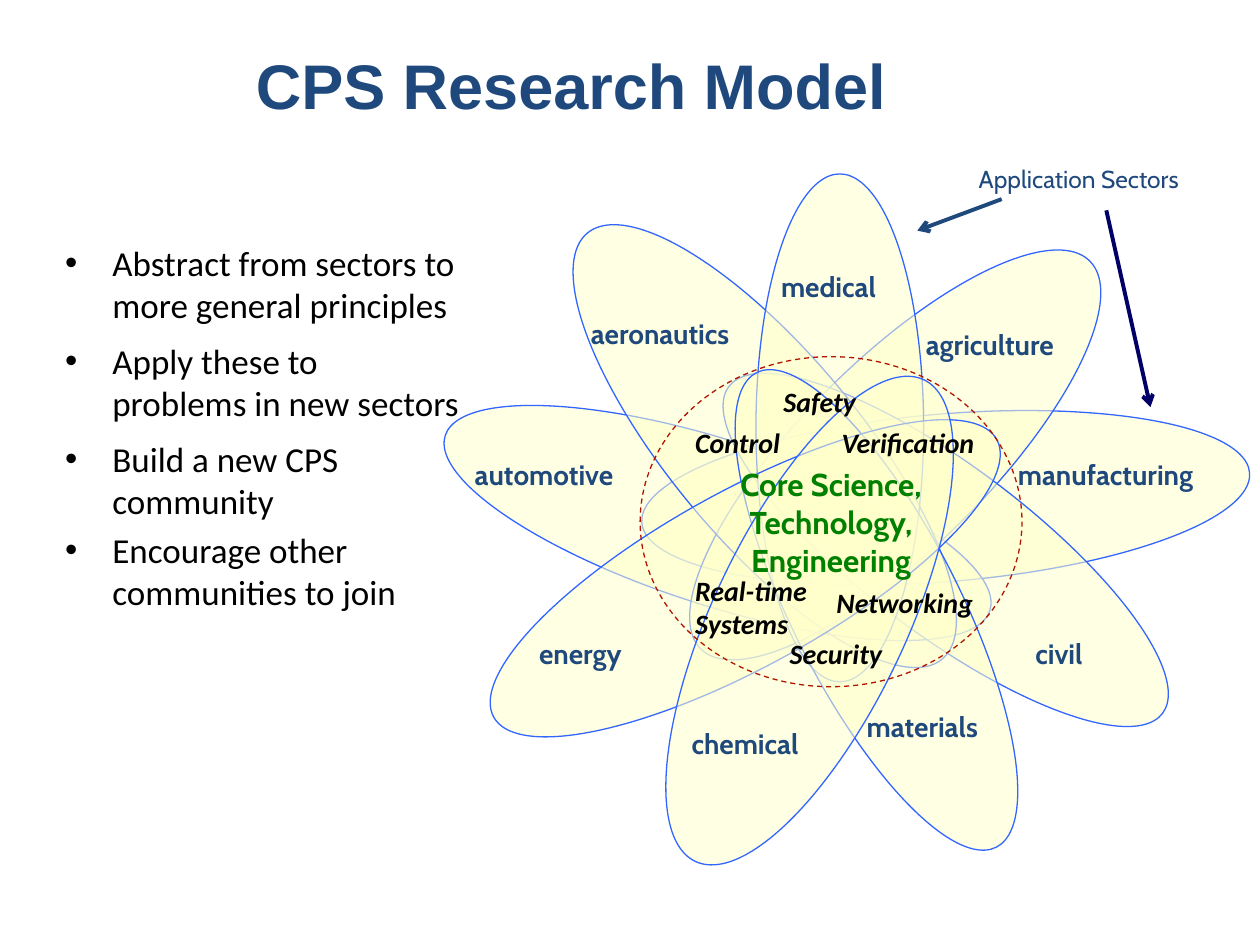
from dataclasses import dataclass

from lxml import etree
from pptx import Presentation, util as u
from pptx.dml.color import RGBColor
from pptx.enum import dml, shapes, text
from pptx.oxml.ns import qn

Pt = u.Pt


@dataclass(frozen=True)
class Theme:
    navy: str = "1F497D"
    midnight: str = "000066"
    black: str = "000000"
    green: str = "008000"
    petal_fill: str = "FFFFCC"
    petal_line: str = "3366FF"
    core_line: str = "B11400"
    petal_opacity: int = 54
    title_size: int = 36
    body_size: int = 20
    core_size: int = 18
    label_size: int = 16
    note_size: int = 14
    title_font: str = "Arial"
    body_font: str = "Calibri"
    label_font: str = "Cabin"


@dataclass(frozen=True)
class Box:
    left: float
    top: float
    width: float
    height: float

    def inner(self, left, top, width, height):
        """Return a box whose corner is measured from this one."""
        return Box(self.left + left, self.top + top, width, height)

    def lengths(self):
        return Pt(self.left), Pt(self.top), Pt(self.width), Pt(self.height)


THEME = Theme()
LABEL_HEIGHT = 26.6

# Sector: petal left, top, width, height, rotation; label left, top, width
SECTORS = {
    "manufacturing": ((240.5, 20.2, 95.8, 348.5, 85.3), (322.6, 167.8, 135.4)),
    "automotive": ((110.9, 45.4, 94.3, 326.9, 287.8), (12.2, 167.8, 107.3)),
    "agriculture": ((205.9, 13, 107.3, 313.9, 45.1), (270, 93.6, 108)),
    "civil": ((240.5, 69.1, 95.8, 310.3, 127), (332.6, 270, 51)),
    "aeronautics": ((131, 6.5, 108, 316.8, 320.2), (78.5, 87.1, 110)),
    "medical": ((180, 9.4, 95.8, 290.2, 0), (187.2, 60.5, 82.8)),
    "materials": ((200.9, 106.6, 95.8, 303.8, 153.2), (236.2, 311.8, 93.6)),
    "energy": ((123.8, 76.3, 100.1, 328.3, 241.1), (49, 270, 77)),
    "chemical": ((155.5, 112.3, 110.2, 304.6, 205.4), (136.1, 321.8, 85.7)),
}

# Discipline lines, left, top, width
DISCIPLINES = [
    (["Safety"], 188.6, 126, 67),
    (["Verification"], 221.8, 149.8, 105.8),
    (["Networking"], 218.9, 241.2, 106.6),
    (["Real-time", "Systems"], 138.2, 234, 91.4),
    (["Control"], 138.2, 149.8, 75.6),
    (["Security"], 192.2, 270, 82),
]

# Principle and the space before it
PRINCIPLES = [
    ("Abstract from sectors to more general principles", 0),
    ("Apply these to problems in new sectors", 8),
    ("Build a new CPS community", 8),
    ("Encourage other communities to join", 4),
]


def write_text(frame, lines, size, color, font, bold=False, italic=False,
               align=text.PP_ALIGN.LEFT, anchor=text.MSO_ANCHOR.TOP, wrap=True):
    frame.auto_size = text.MSO_AUTO_SIZE.NONE
    frame.word_wrap = wrap
    frame.vertical_anchor = anchor
    for index, line in enumerate(lines):
        paragraph = frame.add_paragraph() if index else frame.paragraphs[0]
        paragraph.text = line
        paragraph.alignment = align
        for run in paragraph.runs:
            run.font.name, run.font.size = font, Pt(size)
            run.font.bold, run.font.italic = bold, italic
            run.font.color.rgb = RGBColor.from_string(color)


def add_label(parent, box, lines, **style):
    label = parent.add_textbox(*box.lengths())
    write_text(label.text_frame, lines, **style)


def add_ellipse(parent, box, line_color):
    ellipse = parent.add_shape(shapes.MSO_SHAPE.OVAL, *box.lengths())
    ellipse.shadow.inherit = False
    ellipse.fill.background()
    ellipse.line.color.rgb = RGBColor.from_string(line_color)
    ellipse.line.width = Pt(0.75)
    return ellipse


def add_petal(parent, box, rotation):
    petal = add_ellipse(parent, box, THEME.petal_line)
    petal.rotation = rotation
    petal.fill.solid()
    petal.fill.fore_color.rgb = RGBColor.from_string(THEME.petal_fill)
    color = petal.fill._xPr.find(".//" + qn("a:srgbClr"))
    etree.SubElement(color, qn("a:alpha"), val=str(THEME.petal_opacity * 1000))


def add_arrow(parent, box, start, end, color):
    points = [Pt(origin + offset) for point in (start, end)
              for origin, offset in zip((box.left, box.top), point)]
    arrow = parent.add_connector(shapes.MSO_CONNECTOR.STRAIGHT, *points)
    arrow.line.color.rgb = RGBColor.from_string(color)
    arrow.line.width = Pt(2.25)
    etree.SubElement(arrow.line._get_or_add_ln(), qn("a:tailEnd"), type="arrow")
    etree.SubElement(arrow._element.spPr, qn("a:effectLst"))


def place(placeholder, box):
    placeholder.left, placeholder.top, placeholder.width, placeholder.height = box.lengths()


def fill_title(slide, box):
    title = slide.shapes.title
    place(title, box)
    write_text(title.text_frame, ["CPS Research Model"], THEME.title_size, THEME.navy,
               THEME.title_font, bold=True, anchor=text.MSO_ANCHOR.MIDDLE)


def fill_principles(slide, box):
    body = slide.placeholders[1]
    place(body, box)
    write_text(body.text_frame, [line for line, _ in PRINCIPLES], THEME.body_size,
               THEME.black, THEME.body_font)
    for paragraph, (_, space) in zip(body.text_frame.paragraphs, PRINCIPLES):
        paragraph.space_before = Pt(space)
        properties = paragraph._p.get_or_add_pPr()
        properties.set("marL", str(Pt(27)))
        properties.set("indent", str(-Pt(27)))
        etree.SubElement(properties, qn("a:buFont"), typeface="Arial")
        etree.SubElement(properties, qn("a:buChar"), char="•")


def add_sectors(slide, box):
    for petal, _ in SECTORS.values():
        add_petal(slide.shapes, box.inner(*petal[:4]), petal[4])
    for name, (_, label) in SECTORS.items():
        add_label(slide.shapes, box.inner(*label, LABEL_HEIGHT), [name], bold=True,
                  size=THEME.label_size, color=THEME.navy, font=THEME.label_font)


def add_sector_note(slide, box):
    add_label(slide.shapes, box.inner(300.2, 0, 152, 24.5), ["Application Sectors"],
              size=THEME.note_size, color=THEME.navy, font=THEME.label_font)
    add_arrow(slide.shapes, box, (320.4, 23.8), (272.2, 41.8), THEME.navy)
    add_arrow(slide.shapes, box, (380.2, 30.2), (405.4, 142.6), THEME.midnight)


def add_core(slide, box):
    core = add_ellipse(slide.shapes, box.inner(113.8, 113.8, 218.2, 188.6), THEME.core_line)
    core.line.dash_style = dml.MSO_LINE.DASH
    write_text(core.text_frame, ["Core Science,\vTechnology,\vEngineering"],
               THEME.core_size, THEME.green, THEME.label_font, bold=True, wrap=False,
               align=text.PP_ALIGN.CENTER, anchor=text.MSO_ANCHOR.MIDDLE)
    group = slide.shapes.add_group_shape()
    for lines, left, top, width in DISCIPLINES:
        height = LABEL_HEIGHT + 19.4 * (len(lines) - 1)
        add_label(group.shapes, box.inner(left, top, width, height), lines, bold=True,
                  italic=True, size=THEME.label_size, color=THEME.black,
                  font=THEME.body_font)


def main():
    presentation = Presentation()
    presentation.slide_width, presentation.slide_height = Pt(720), Pt(540)
    slide = presentation.slides.add_slide(presentation.slide_layouts[1])
    fill_title(slide, Box(139, 15, 504, 66))
    fill_principles(slide, Box(30, 134.6, 240, 306))
    flower = Box(252, 90, 468, 414)
    add_sectors(slide, flower)
    add_sector_note(slide, flower)
    add_core(slide, flower)
    presentation.save("out.pptx")


if __name__ == "__main__":
    main()
